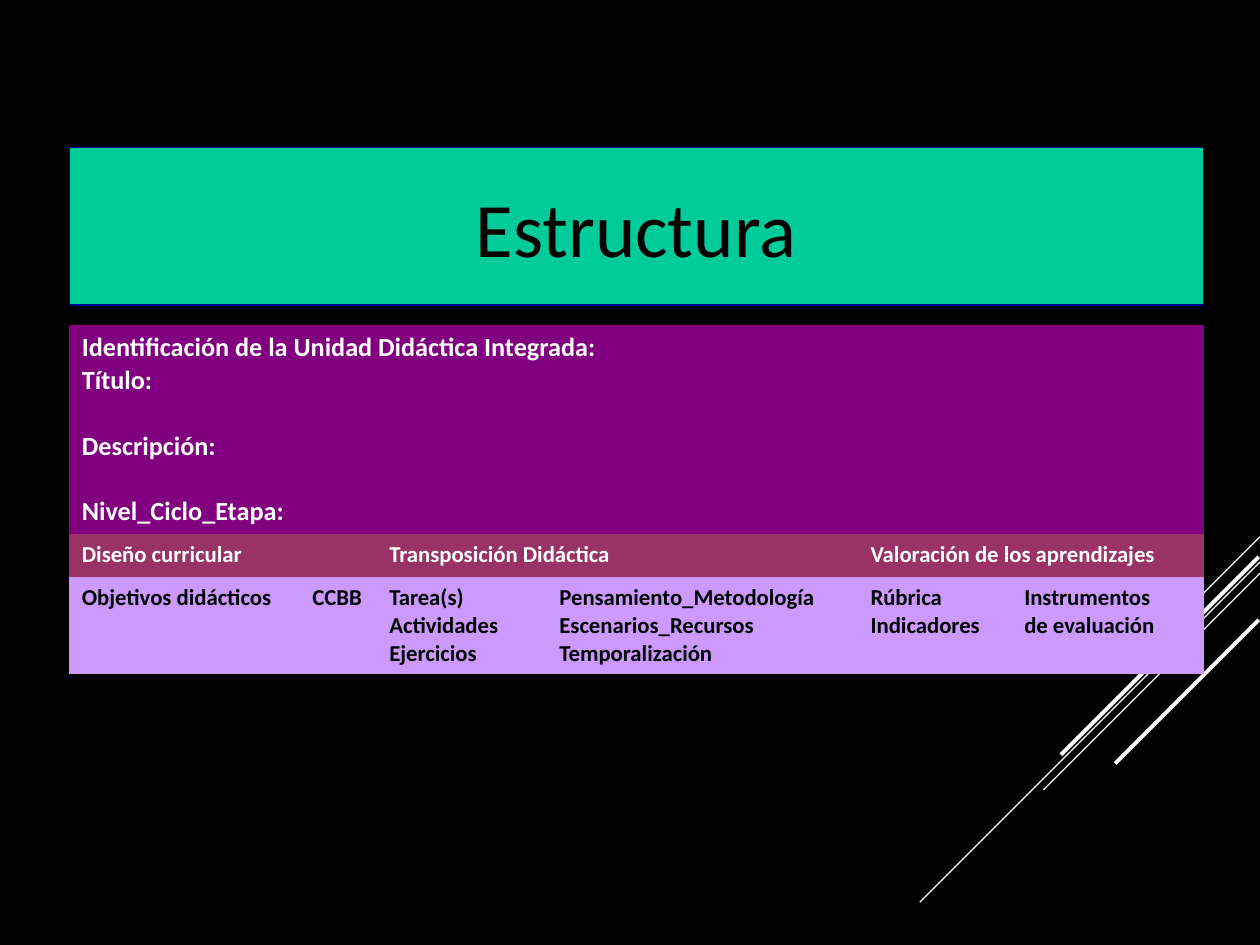
from dataclasses import dataclass

from pptx import Presentation
from pptx.dml.color import RGBColor
from pptx.enum.shapes import MSO_CONNECTOR, MSO_SHAPE
from pptx.enum.text import MSO_ANCHOR, PP_ALIGN
from pptx.oxml.ns import qn
from pptx.oxml.xmlchemy import OxmlElement
from pptx.util import Inches, Pt

STRAIGHT = MSO_CONNECTOR.STRAIGHT
RECTANGLE = MSO_SHAPE.RECTANGLE
MIDDLE = MSO_ANCHOR.MIDDLE
CENTER = PP_ALIGN.CENTER
NO_TABLE_STYLE = "{2D5ABB26-0587-4C30-8999-92F81FD0307C}"

SLIDE_WIDTH, SLIDE_HEIGHT = Inches(10), Inches(7.5)


@dataclass(frozen=True)
class Theme:
    font: str = "Calibri"
    black: str = "000000"
    white: str = "FFFFFF"
    title_fill: str = "00CC99"
    title_line: str = "000099"
    identification_fill: str = "800080"
    heading_fill: str = "993366"
    content_fill: str = "CC99FF"
    title_size: int = 44
    identification_size: int = 15
    body_size: int = 13
    thin: float = 0.75
    thick: float = 2.25
    line_spacing: float = 1.02
    field_gap: float = 18.7


THEME = Theme()

# All lengths below are percentages of the slide width.
LEFT, WIDTH = 5.5, 90
TITLE_TOP, TITLE_HEIGHT = 11.7, 12.5
TABLE_TOP = 25.8
COLUMNS = (18.3, 6.1, 13.5, 24.7, 12.2, 15.3)
ROWS = (16.3, 3.4, 7.6, 17.8)
HANGING_INDENT = 3.8

# Upper end (x, y), drop towards the lower left at 45 degrees, line width
DIAGONALS = (
    (100, 42.6, 8.3, THEME.thin),
    (100, 44.6, 27, THEME.thin),
    (100, 45.5, 17.2, THEME.thin),
    (99.9, 44.2, 15.7, THEME.thick),
    (99.9, 49.2, 11.4, THEME.thick),
)

IDENTIFICATION = (
    "Identificación de la Unidad Didáctica Integrada:",
    "Título:",
    "Descripción:",
    "Nivel_Ciclo_Etapa:",
)
SPACED_FIELDS = ("Descripción:", "Nivel_Ciclo_Etapa:")
HEADINGS = (
    "Diseño curricular",
    "Transposición Didáctica",
    "Valoración de los aprendizajes",
)
CONTENT = (
    ("Objetivos didácticos",),
    ("CCBB",),
    ("Tarea(s)", "Actividades", "Ejercicios"),
    ("Pensamiento_Metodología", "Escenarios_Recursos", "Temporalización"),
    ("Rúbrica", "Indicadores"),
    ("Instrumentos", "de evaluación"),
)


def share(percent):
    return round(SLIDE_WIDTH * percent / 100)


def color(name):
    return RGBColor.from_string(name)


def paint(target, name):
    target.fill.solid()
    target.fill.fore_color.rgb = color(name)


def style_font(para, size, name, bold):
    for span in para.runs:
        span.font.name = THEME.font
        span.font.size = Pt(size)
        span.font.bold = bold
        span.font.color.rgb = color(name)


def add_diagonal(page, x, y, drop, width):
    line = page.shapes.add_connector(
        STRAIGHT, share(x), share(y), share(x - drop), share(y + drop))
    line.line.color.rgb = color(THEME.white)
    line.line.width = Pt(width)
    line._element.spPr.append(OxmlElement("a:effectLst"))


def add_title(page, text):
    box = page.shapes.add_shape(
        RECTANGLE, share(LEFT), share(TITLE_TOP), share(WIDTH), share(TITLE_HEIGHT))
    box.shadow.inherit = False
    paint(box, THEME.title_fill)
    box.line.color.rgb = color(THEME.title_line)
    box.line.width = Pt(THEME.thin)
    frame = box.text_frame
    frame.text = text
    frame.vertical_anchor = MIDDLE
    para = frame.paragraphs[0]
    para.alignment = CENTER
    style_font(para, THEME.title_size, THEME.black, False)


def fill_cell(cell, lines, fill, text_color, size=THEME.body_size):
    paint(cell, fill)
    cell.text_frame.text = "\n".join(lines)
    for para in cell.text_frame.paragraphs:
        properties = para._p.get_or_add_pPr()
        properties.set("marL", str(share(HANGING_INDENT)))
        properties.set("indent", str(-share(HANGING_INDENT)))
        para.line_spacing = THEME.line_spacing
        if para.text in SPACED_FIELDS:
            para.space_before = Pt(THEME.field_gap)
        style_font(para, size, text_color, True)


def add_plain_table(page):
    """Add the empty table without banding, borders or fills."""
    frame = page.shapes.add_table(
        len(ROWS), len(COLUMNS), share(LEFT), share(TABLE_TOP),
        share(sum(COLUMNS)), share(sum(ROWS)))
    next(frame._element.iter(qn("a:tableStyleId"))).text = NO_TABLE_STYLE
    table = frame.table
    table.first_row = table.horz_banding = False
    for column, width in zip(table.columns, COLUMNS):
        column.width = share(width)
    for row, height in zip(table.rows, ROWS):
        row.height = share(height)
    for cell in table.iter_cells():
        cell.fill.background()
    return table


def add_structure_table(page):
    table = add_plain_table(page)
    table.cell(0, 0).merge(table.cell(0, len(COLUMNS) - 1))
    fill_cell(table.cell(0, 0), IDENTIFICATION, THEME.identification_fill,
              THEME.white, THEME.identification_size)
    for index, heading in enumerate(HEADINGS):
        cell = table.cell(1, 2 * index)
        cell.merge(table.cell(1, 2 * index + 1))
        fill_cell(cell, [heading], THEME.heading_fill, THEME.white)
    for index, lines in enumerate(CONTENT):
        fill_cell(table.cell(2, index), lines, THEME.content_fill, THEME.black)


def main():
    deck = Presentation()
    deck.slide_width, deck.slide_height = SLIDE_WIDTH, SLIDE_HEIGHT
    page = deck.slides.add_slide(deck.slide_layouts[6])
    paint(page.background, THEME.black)
    for diagonal in DIAGONALS:
        add_diagonal(page, *diagonal)
    add_title(page, "Estructura")
    add_structure_table(page)
    deck.save("out.pptx")


if __name__ == "__main__":
    main()
